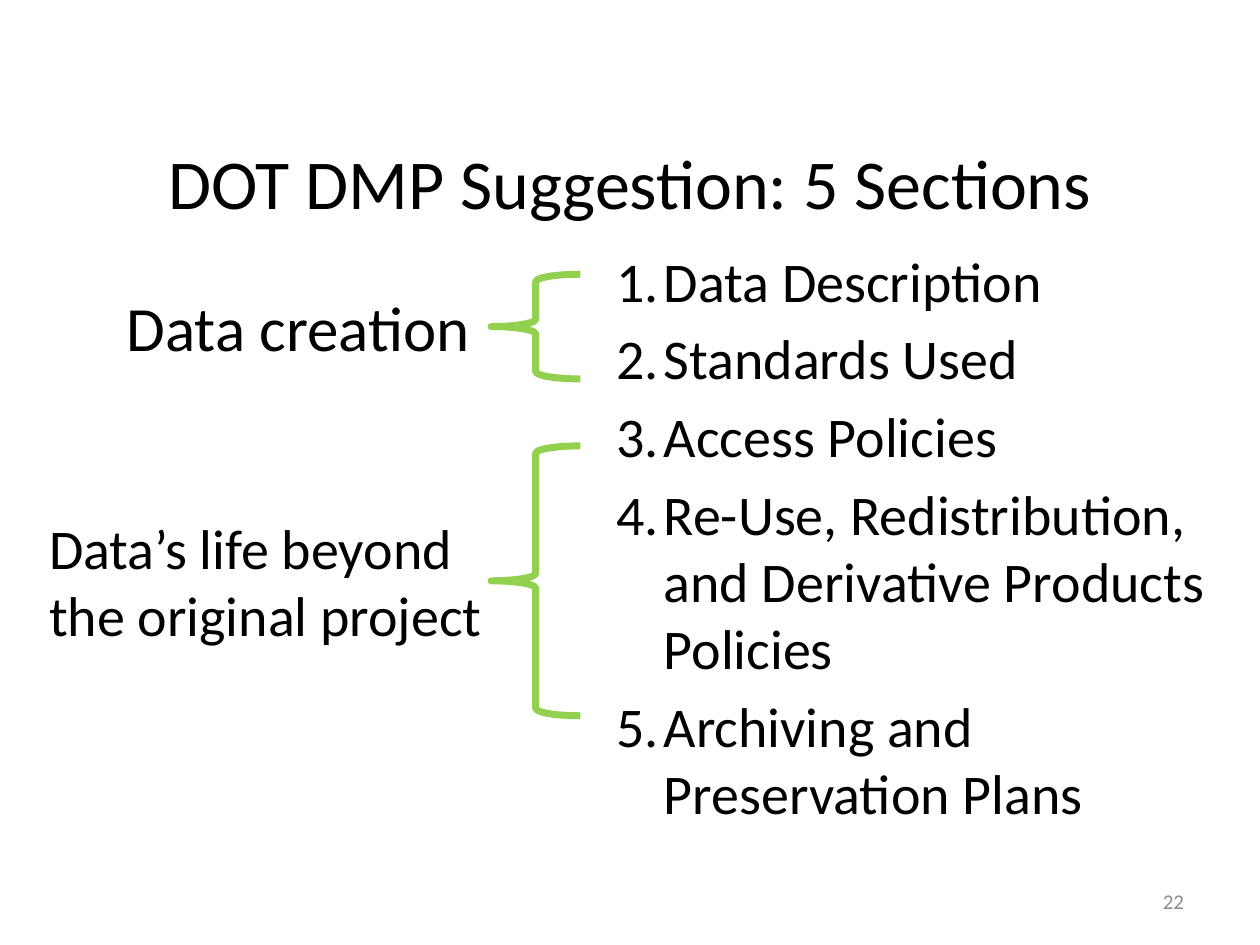
import pptx
import pptx.dml.color
import pptx.enum.shapes
import pptx.enum.text
import pptx.oxml
import pptx.util
from pptx.util import Cm

ALIGN = pptx.enum.text.PP_ALIGN
ANCHOR = pptx.enum.text.MSO_ANCHOR
COLORS = {"text": "000000", "brace": "92D050", "number": "8C8C8C"}
NUMBER_XML = ('<a:buAutoNum xmlns:a="http://schemas.openxmlformats.org/'
              'drawingml/2006/main" type="arabicPeriod"/>')


def rgb(name):
    return pptx.dml.color.RGBColor.from_string(COLORS[name])


class SlideBuilder:
    font = "Calibri"
    number_indent = Cm(0.95)

    def __init__(self, slide):
        self.slide = slide

    def text(self, box, lines, size, color="text", align=ALIGN.LEFT,
             anchor=ANCHOR.TOP, wrap=True):
        """Add a text box with one paragraph per line; box is in cm."""
        sp = self.slide.shapes.add_textbox(*map(Cm, box))
        tf = sp.text_frame
        tf.word_wrap = wrap
        tf.vertical_anchor = anchor
        tf.text = "\n".join(lines)
        for p in tf.paragraphs:
            p.alignment = align
            p.font.name = self.font
            p.font.size = pptx.util.Pt(size)
            p.font.color.rgb = rgb(color)
        return sp

    def numbered_list(self, box, items, size):
        sp = self.text(box, items, size)
        for p in sp.text_frame.paragraphs:
            p.space_after = pptx.util.Pt(6)
            pPr = p._p.get_or_add_pPr()
            pPr.set("marL", str(self.number_indent))
            pPr.set("indent", str(-self.number_indent))
            pPr.find(pptx.oxml.ns.qn("a:defRPr")).addprevious(
                pptx.oxml.parse_xml(NUMBER_XML))

    def brace(self, top, height):
        sp = self.slide.shapes.add_shape(
            pptx.enum.shapes.MSO_SHAPE.LEFT_BRACE,
            Cm(9.9), Cm(top), Cm(1.8), Cm(height))
        sp.shadow.inherit = False
        sp.fill.background()
        sp.line.color.rgb = rgb("brace")
        sp.line.width = pptx.util.Pt(4)


def main():
    prs = pptx.Presentation()
    prs.slide_width, prs.slide_height = Cm(25.4), Cm(19.05)
    s = SlideBuilder(prs.slides.add_slide(prs.slide_layouts[6]))

    s.text((1.27, 2.69, 22.86, 2.16), ["DOT DMP Suggestion: 5 Sections"], 40,
           align=ALIGN.CENTER)
    s.numbered_list((12.18, 4.84, 12.88, 12.07), [
        "Data Description",
        "Standards Used",
        "Access Policies",
        "Re-Use, Redistribution, and Derivative Products Policies",
        "Archiving and Preservation Plans",
    ], 32)

    s.text((2.3, 5.69, 7.49, 1.8), ["Data creation"], 36, wrap=False)
    s.brace(5.53, 2.11)
    s.text((0.74, 10.22, 9.32, 3),
           ["Data’s life beyond", "the original project"], 32, wrap=False)
    s.brace(8.99, 5.44)

    s.text((18.2, 17.65, 5.92, 1.02), ["22"], 12, color="number",
           align=ALIGN.RIGHT, anchor=ANCHOR.MIDDLE)
    prs.save("out.pptx")


if __name__ == "__main__":
    main()
